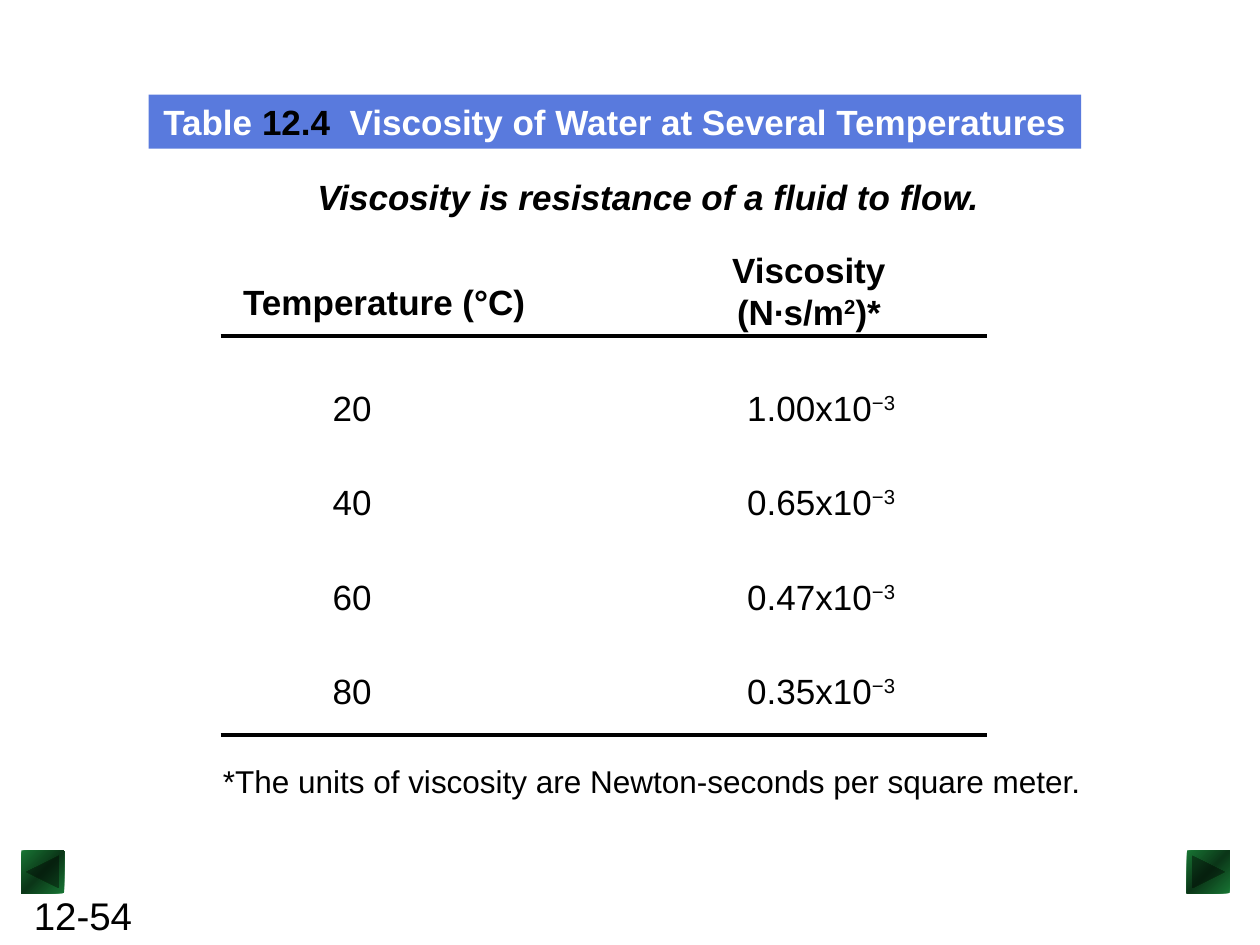
from copy import deepcopy
from dataclasses import dataclass

from lxml.etree import SubElement
from pptx import Presentation
from pptx.dml.color import RGBColor
from pptx.enum.shapes import MSO_CONNECTOR, MSO_SHAPE
from pptx.enum.text import MSO_ANCHOR, PP_ALIGN
from pptx.oxml.ns import qn
from pptx.util import Inches, Pt


@dataclass(frozen=True)
class Theme:
    font: str = "Arial"
    ink: str = "000000"
    paper: str = "FFFFFF"
    banner: str = "0033CC"
    banner_alpha: int = 65000
    button_light: str = "187534"
    button_dark: str = "0B3618"
    body: int = 20
    note: int = 18
    number: int = 22
    rule: float = 2.25


THEME = Theme()
HEADINGS = ("Temperature (°C)", ("Viscosity (N∙s/m", "^2", ")*"))
READINGS = (("20", "1.00"), ("40", "0.65"), ("60", "0.47"), ("80", "0.35"))


def write(frame, pieces, size=THEME.body, color=THEME.ink, bold=False,
          italic=False, align=PP_ALIGN.LEFT, spacing=None):
    """Fill a frame; "^x" is superscript and (text, color) recolours a piece."""
    paragraph = frame.paragraphs[0]
    paragraph.alignment = align
    paragraph.line_spacing = spacing
    for piece in [pieces] if isinstance(pieces, str) else pieces:
        words, piece_color = (piece, color) if isinstance(piece, str) else piece
        run = paragraph.add_run()
        run.text = words.removeprefix("^")
        run.font.name, run.font.size = THEME.font, Pt(size)
        run.font.bold, run.font.italic = bold, italic
        run.font.color.rgb = RGBColor.from_string(piece_color)
        if words.startswith("^"):
            run._r.get_or_add_rPr().set("baseline", "30000")


def add_label(slide, box, words, **style):
    label = slide.shapes.add_textbox(*map(Inches, box))
    label.text_frame.word_wrap = True
    write(label.text_frame, words, **style)


def add_banner(slide, box):
    banner = slide.shapes.title
    banner.left, banner.top, banner.width, banner.height = map(Inches, box)
    banner.fill.solid()
    banner.fill.fore_color.rgb = RGBColor.from_string(THEME.banner)
    tint = banner._element.spPr.find(qn("a:solidFill"))[0]
    SubElement(tint, qn("a:alpha")).set("val", str(THEME.banner_alpha))
    frame = banner.text_frame
    frame.word_wrap = False
    frame.vertical_anchor = MSO_ANCHOR.MIDDLE
    write(frame, ("Table ", ("12.4", THEME.ink),
                  "  Viscosity of Water at Several Temperatures"),
          color=THEME.paper, bold=True, align=PP_ALIGN.CENTER)


def add_rule(slide, left, top, width):
    rule = slide.shapes.add_connector(
        MSO_CONNECTOR.STRAIGHT,
        *map(Inches, (left, top, left + width, top)))
    rule.line.color.rgb = RGBColor.from_string(THEME.ink)
    rule.line.width = Pt(THEME.rule)
    SubElement(rule._element.spPr, qn("a:effectLst"))


def fill_cell(cell, words, margins, anchor, **style):
    cell.margin_left, cell.margin_top, cell.margin_right, cell.margin_bottom = (
        map(Inches, margins))
    cell.vertical_anchor = anchor
    cell.fill.solid()
    cell.fill.fore_color.rgb = RGBColor.from_string(THEME.paper)
    write(cell.text_frame, words, **style)


def add_viscosity_table(slide, box):
    left, top, width, height = box
    row_height, temperature_width = 0.75, 3.75
    table = slide.shapes.add_table(
        len(READINGS) + 1, 2, *map(Inches, box)).table
    table.first_row = table.horz_banding = False
    table.columns[0].width = Inches(temperature_width)
    table.columns[1].width = Inches(width - temperature_width)
    for row in table.rows:
        row.height = Inches(row_height)
    # The last row takes the space left above the closing rule
    table.rows[len(READINGS)].height = Inches(
        height - row_height * len(READINGS))

    # Column headings
    temperature, viscosity = table.rows[0].cells
    fill_cell(temperature, HEADINGS[0], (0.18, 0, 0, 0.12),
              MSO_ANCHOR.BOTTOM, bold=True)
    fill_cell(viscosity, HEADINGS[1], (0.27, 0, 0.76, 0.04),
              MSO_ANCHOR.BOTTOM, bold=True, align=PP_ALIGN.CENTER,
              spacing=1.08)

    # Readings
    for row, (degrees, factor) in enumerate(READINGS, start=1):
        fill_cell(table.cell(row, 0), degrees, (0.89, 0.41, 0, 0),
                  MSO_ANCHOR.TOP)
        fill_cell(table.cell(row, 1), (factor + "x10", "^−3"),
                  (0.43, 0.41, 0, 0), MSO_ANCHOR.TOP)

    # Rules under the headings and under the last reading
    for rule_top in (top + row_height, top + height):
        add_rule(slide, left, rule_top, width)


def add_button(slide, box, direction):
    button = slide.shapes.add_shape(direction, *map(Inches, box))
    button.shadow.inherit = False
    button.line.fill.background()
    button.fill.gradient()
    button.fill.gradient_angle = 315
    first = button._element.spPr.find(qn("a:gradFill")).find(qn("a:gsLst"))[0]
    first.addnext(deepcopy(first))
    colors = (THEME.button_light, THEME.button_dark, THEME.button_light)
    for stop, color, position in zip(
            button.fill.gradient_stops, colors, (0, 0.5, 1)):
        stop.color.rgb = RGBColor.from_string(color)
        stop.position = position


def add_navigation(slide, box):
    left, top, width, side = box
    add_button(slide, (left, top, side, side),
               MSO_SHAPE.ACTION_BUTTON_BACK_OR_PREVIOUS)
    add_button(slide, (left + width - side, top, side, side),
               MSO_SHAPE.ACTION_BUTTON_FORWARD_OR_NEXT)
    add_label(slide, (left, 7.03, 1.08, 0.47), "12-54", size=THEME.number)


def main():
    deck = Presentation()
    deck.slide_width, deck.slide_height = Inches(10), Inches(7.5)
    slide = deck.slides.add_slide(deck.slide_layouts[5])

    add_navigation(slide, (0.17, 6.75, 9.59, 0.34))
    add_viscosity_table(slide, (1.75, 1.92, 6.08, 3.91))
    add_label(slide, (1.67, 6, 7.08, 0.4),
              "*The units of viscosity are Newton-seconds per square meter.",
              size=THEME.note)
    add_label(slide, (2.42, 1.34, 5.45, 0.43),
              "Viscosity is resistance of a fluid to flow.",
              bold=True, italic=True)
    add_banner(slide, (1.18, 0.75, 7.4, 0.43))
    deck.save("out.pptx")


if __name__ == "__main__":
    main()
